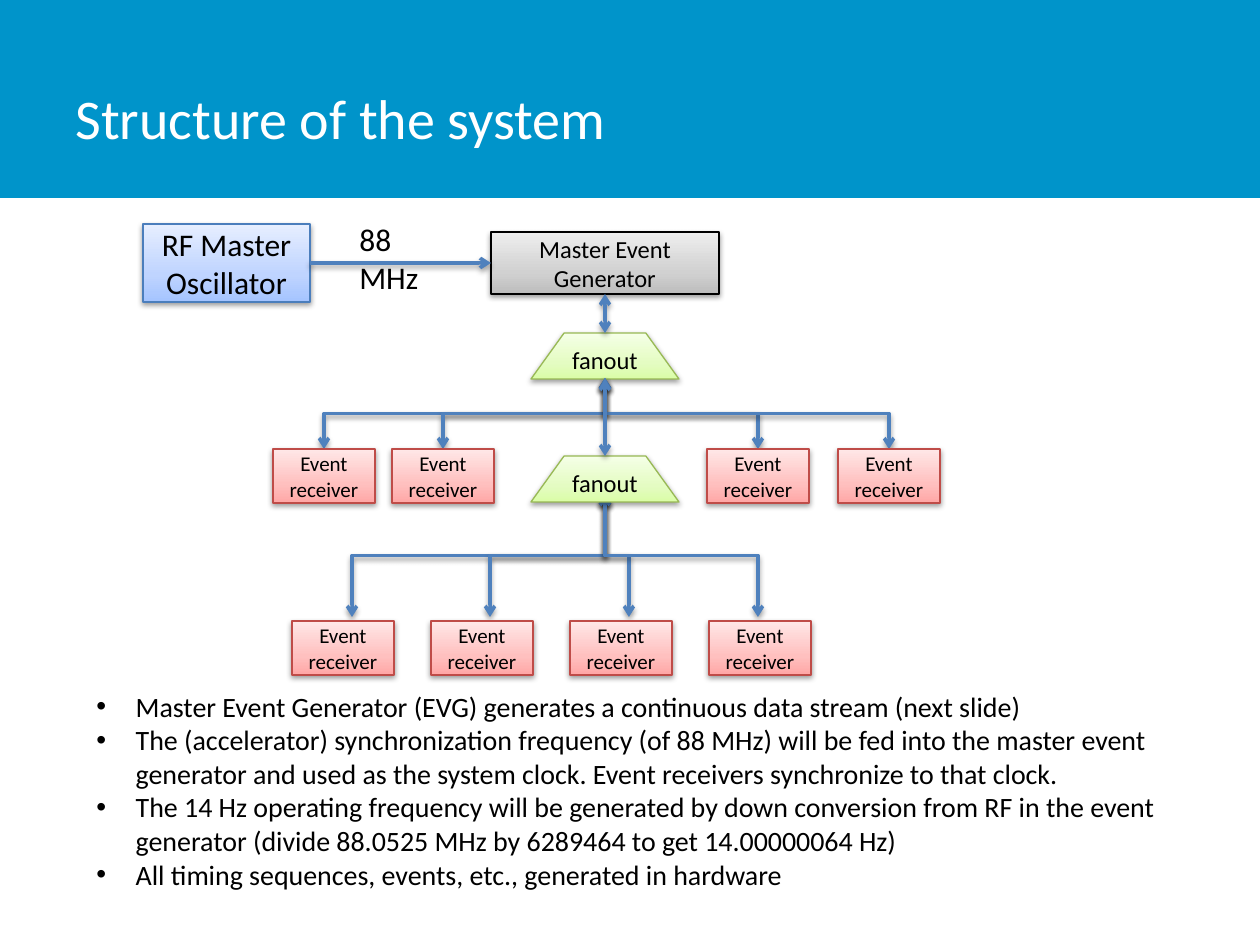
from copy import deepcopy
from pptx import Presentation
from pptx.dml.color import RGBColor as RGB
from pptx.enum.shapes import MSO_CONNECTOR as LINK, MSO_SHAPE as SHAPE
from pptx.enum.text import MSO_ANCHOR as ANCHOR, PP_ALIGN as ALIGN
from pptx.oxml import parse_xml
from pptx.oxml.ns import nsdecls, qn
from pptx.util import Inches, Pt

PX = Inches(1) / 126
FONT = "Calibri"
BLACK, WHITE = RGB(0, 0, 0), RGB(255, 255, 255)
BAND, WIRE = RGB(0x00, 0x94, 0xCA), RGB(0x4F, 0x81, 0xBD)

# Each style: line colour, then gradient colours from bottom to top
GREY = (BLACK, RGB(0xBD, 0xBD, 0xBD), RGB(0xD1, 0xD1, 0xD1), RGB(0xEE, 0xEE, 0xEE))
BLUE = (RGB(0x4B, 0x7E, 0xBC), RGB(0xA4, 0xC4, 0xFF), RGB(0xBF, 0xD4, 0xFF),
        RGB(0xE6, 0xEE, 0xFF))
GREEN = (RGB(0x98, 0xB9, 0x55), RGB(0xDA, 0xFD, 0xA7), RGB(0xE4, 0xFC, 0xC2),
         RGB(0xF5, 0xFF, 0xE7))
RED = (RGB(0xBF, 0x4C, 0x48), RGB(0xFF, 0xA6, 0xA5), RGB(0xFF, 0xC0, 0xBF),
       RGB(0xFF, 0xE7, 0xE7))
STOPS = (0, 0.35, 1)

TITLE = "Structure of the system"
POINTS = [
    "Master Event Generator (EVG) generates a continuous data stream (next slide)",
    "The (accelerator) synchronization frequency (of 88 MHz) will be fed into the master "
    "event generator and used as the system clock. Event receivers synchronize to that clock.",
    "The 14 Hz operating frequency will be generated by down conversion from RF in the event "
    "generator (divide 88.0525 MHz by 6289464 to get 14.00000064 Hz)",
    "All timing sequences, events, etc., generated in hardware",
]
HUB = 605
RCV_W, RCV_H = 102, 54
# Receiver row: top, left edges, bus start, arrow ends (x), arrow end (y)
UPPER = (449, [273, 392, 707, 838], 378, [324, 443, 758, 889], 449)
LOWER = (621, [292 + 139 * i for i in range(4)], 494, [352, 490, 629, 758], 617)

SHADOW = (f'<a:outerShdw {nsdecls("a")} blurRad="40000" dist="20000" dir="5400000" '
          'rotWithShape="0"><a:srgbClr val="000000"><a:alpha val="38000"/></a:srgbClr>'
          '</a:outerShdw>')


def emu(*vals):
    return [round(v * PX) for v in vals]


def style(paras, size, color=BLACK, align=None):
    for para in paras:
        para.font.name, para.font.size = FONT, Pt(size)
        para.font.color.rgb = color
        para.alignment = align


def add_text(box, text, size, color=BLACK):
    frame = slide.shapes.add_textbox(*emu(*box)).text_frame
    frame.word_wrap = True
    frame.text = text
    style(frame.paragraphs, size, color)
    return frame


def add_node(box, text, size, look, kind=SHAPE.RECTANGLE):
    node = slide.shapes.add_shape(kind, *emu(*box))
    edge, *tints = look
    node.fill.gradient()
    node.fill.gradient_angle = 90
    stops = node._element.spPr.find(".//" + qn("a:gsLst"))
    stops.append(deepcopy(stops[-1]))
    for stop, tint, pos in zip(node.fill.gradient_stops, tints, STOPS):
        stop.color.rgb, stop.position = tint, pos
    node.line.color.rgb, node.line.width = edge, Pt(0.75)
    node.shadow.inherit = False
    node._element.spPr.find(qn("a:effectLst")).append(parse_xml(SHADOW))
    frame = node.text_frame
    frame.word_wrap, frame.vertical_anchor = True, ANCHOR.MIDDLE
    frame.text = text
    style(frame.paragraphs, size, align=ALIGN.CENTER)
    return node


def add_fanout(top):
    node = add_node((HUB - 74, top, 148, 46), "fanout", 14, GREEN, SHAPE.TRAPEZOID)
    node.adjustments[0] = 0.72
    return node


def add_wire(kind, ends, both=True):
    wire = slide.shapes.add_connector(kind, *emu(*ends))
    wire.line.color.rgb, wire.line.width = WIRE, Pt(2)
    props = wire._element.spPr
    line = props.find(qn("a:ln"))
    for tag in ("headEnd", "tailEnd") if both else ("tailEnd",):
        line.append(parse_xml(f'<a:{tag} {nsdecls("a")} type="arrow"/>'))
    effects = parse_xml(f'<a:effectLst {nsdecls("a")}/>')
    effects.append(parse_xml(SHADOW))
    props.append(effects)
    return wire


def join(start, side, end, goal, both=True):
    wire = add_wire(LINK.STRAIGHT, (0, 0, 0, 0), both)
    wire.begin_connect(start, side)
    wire.end_connect(end, goal)


def add_branch(top, x, bottom):
    """Elbow from the hub, down, across and down: a level elbow turned by 90 degrees."""
    mid_x, mid_y = (HUB + x) / 2, (top + bottom) / 2
    half, rise = (bottom - top) / 2, (HUB - x) / 2
    wire = add_wire(LINK.ELBOW, (mid_x - half, mid_y - rise, mid_x + half, mid_y + rise))
    wire.rotation = 90


deck = Presentation()
deck.slide_width, deck.slide_height = Inches(10), Inches(7.5)
slide = deck.slides.add_slide(deck.slide_layouts[6])

band = slide.shapes.add_shape(SHAPE.RECTANGLE, *emu(0, 0, 1260, 198))
band.fill.solid()
band.fill.fore_color.rgb = BAND
band.line.fill.background()
band.shadow.inherit = False
add_text((63, 38, 984, 158), TITLE, 32, WHITE).vertical_anchor = ANCHOR.MIDDLE

notes = add_text((84, 683, 1121, 217), "\n".join(POINTS), 16)
for para in notes.paragraphs:
    props = para._p.get_or_add_pPr()
    props.set("marL", "285750")
    props.set("indent", "-285750")
    props.append(parse_xml(f'<a:buFont {nsdecls("a")} typeface="Arial"/>'))
    props.append(parse_xml(f'<a:buChar {nsdecls("a")} char="•"/>'))
    # Bullets come before the default run properties
    props.append(props.find(qn("a:defRPr")))

master = add_node((HUB - 114, 232, 228, 62), "Master Event Generator", 14, GREY)
clock = add_node((143, 224, 167, 78), "RF Master Oscillator", 18, BLUE)
first = add_fanout(333)
for _, _, start, ends, stop in (UPPER, LOWER):
    for x in ends:
        add_branch(start, x, stop)
second = add_fanout(456)
join(first, 0, master, 2)
join(second, 0, first, 2)
join(clock, 3, master, 1, both=False)
add_text((347, 214, 116, 39), "88 MHz", 18)
for top, lefts, *_ in (UPPER, LOWER):
    for left in lefts:
        add_node((left, top, RCV_W, RCV_H), "Event\nreceiver", 12, RED)

deck.save("out.pptx")
